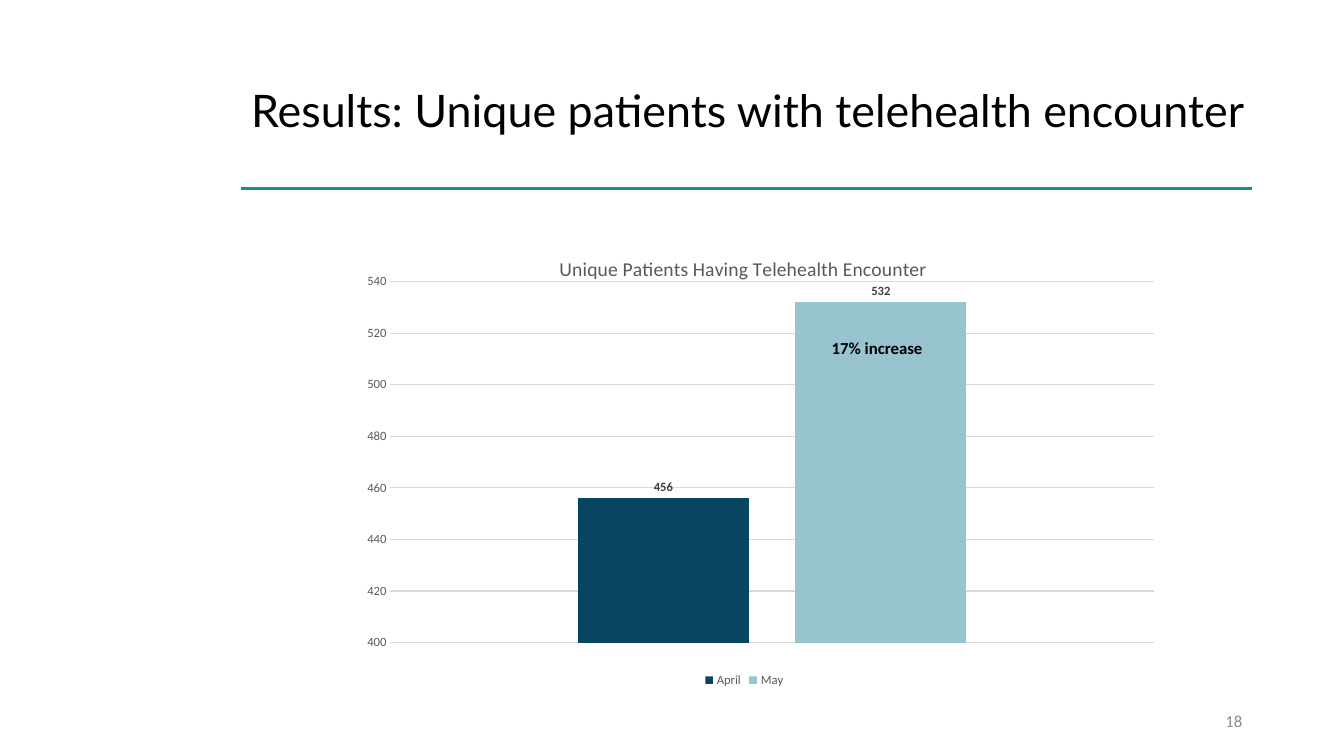
from lxml.etree import SubElement
from pptx import Presentation
from pptx.chart.data import CategoryChartData
from pptx.dml.color import RGBColor
from pptx.enum.chart import XL_CHART_TYPE, XL_LABEL_POSITION, XL_LEGEND_POSITION, XL_TICK_MARK
from pptx.enum.shapes import MSO_CONNECTOR
from pptx.enum.text import MSO_ANCHOR, PP_ALIGN
from pptx.oxml import parse_xml
from pptx.oxml.ns import nsdecls, qn
from pptx.util import Inches, Pt

COLORS = {"black": "000000", "rule": "1A8A99", "number": "8C8C8C", "axis": "595959",
          "label": "404040", "grid": "D9D9D9", "April": "084561", "May": "98C4D0"}
LEFT = Inches(2.39)


def style(font, color, **values):
    for name, value in {"name": "Calibri", "bold": False, **values}.items():
        setattr(font, name, value)
    font.color.rgb = RGBColor.from_string(COLORS[color])


def place(parent, index, **shares):
    """Fix a chart part at shares of the chart's size."""
    for old in parent.findall(qn("c:layout")):
        parent.remove(old)
    layout = parse_xml(f"<c:layout {nsdecls('c')}><c:manualLayout/></c:layout>")
    for tag, val in shares.items():
        SubElement(layout[0], qn(f"c:{tag}")).set("val", str(val))
    parent.insert(index, layout)


prs = Presentation()
prs.slide_width, prs.slide_height = Inches(13.33), Inches(7.5)
s = prs.slides.add_slide(prs.slide_layouts[5])

# Title
title = s.shapes.title
title.left, title.top, title.width, title.height = LEFT, Inches(0.4), Inches(10.27), Inches(1.45)
tf = title.text_frame
tf.text = "Results: Unique patients with telehealth encounter"
tf.vertical_anchor = MSO_ANCHOR.MIDDLE
p = tf.paragraphs[0]
p.alignment, p.line_spacing = PP_ALIGN.LEFT, 0.9
style(p.runs[0].font, "black", name="Lato", size=Pt(32))

# Rule under the title
rule = s.shapes.add_connector(MSO_CONNECTOR.STRAIGHT, LEFT, Inches(1.87), Inches(12.42), Inches(1.87))
rule.line.color.rgb = RGBColor.from_string(COLORS["rule"])
rule.line.width = Pt(1.75)
SubElement(rule._element.spPr, qn("a:effectLst"))

# Column chart
data = CategoryChartData()
data.categories = ["1"]
for month, patients in (("April", 456), ("May", 532)):
    data.add_series(month, [patients])
chart = s.shapes.add_chart(XL_CHART_TYPE.COLUMN_CLUSTERED, Inches(3.32), Inches(2.29),
                           Inches(8.13), Inches(4.57), data).chart
style(chart.font, "black", size=Pt(10))

chart.has_title = True
tf = chart.chart_title.text_frame
tf.text = "Unique Patients Having Telehealth Encounter"
style(tf.paragraphs[0].runs[0].font, "axis", size=Pt(14))
place(chart.chart_title._element, 1, xMode="edge", yMode="edge", x=0.27, y=0.045)
place(chart._chartSpace.chart.plotArea, 0, layoutTarget="inner", xMode="edge", yMode="edge",
      x=0.068, y=0.11, w=0.932, h=0.784)

chart.has_legend = True
chart.legend.position = XL_LEGEND_POSITION.BOTTOM
chart.legend.include_in_layout = False
style(chart.legend.font, "axis", size=Pt(9))

# Axes
chart.category_axis.visible = False
axis = chart.value_axis
for name, value in {"minimum_scale": 400, "maximum_scale": 540, "major_unit": 20,
                    "major_tick_mark": XL_TICK_MARK.NONE}.items():
    setattr(axis, name, value)
axis.format.line.fill.background()
grid = axis.major_gridlines.format.line
grid.color.rgb, grid.width = RGBColor.from_string(COLORS["grid"]), Pt(0.75)
style(axis.tick_labels.font, "axis", size=Pt(9))

# Columns and their values
plot = chart.plots[0]
plot.gap_width, plot.overlap, plot.vary_by_categories = 219, -27, False
for series in plot.series:
    series.format.fill.solid()
    series.format.fill.fore_color.rgb = RGBColor.from_string(COLORS[series.name])
    labels = series.data_labels
    labels.show_value = True
    labels.position = XL_LABEL_POSITION.OUTSIDE_END
    style(labels.font, "label", size=Pt(9), bold=True)

# Note on the May column, and slide number
for text, box, anchor, align, color, bold in (
        ("17% increase", (8.15, 3.3, 2, 0.3), MSO_ANCHOR.TOP, PP_ALIGN.LEFT, "black", True),
        ("18", (9.42, 6.95, 3, 0.4), MSO_ANCHOR.MIDDLE, PP_ALIGN.RIGHT, "number", False)):
    tf = s.shapes.add_textbox(*map(Inches, box)).text_frame
    tf.word_wrap, tf.vertical_anchor, tf.text = True, anchor, text
    p = tf.paragraphs[0]
    p.alignment = align
    style(p.runs[0].font, color, size=Pt(12), bold=bold)

prs.save("out.pptx")
